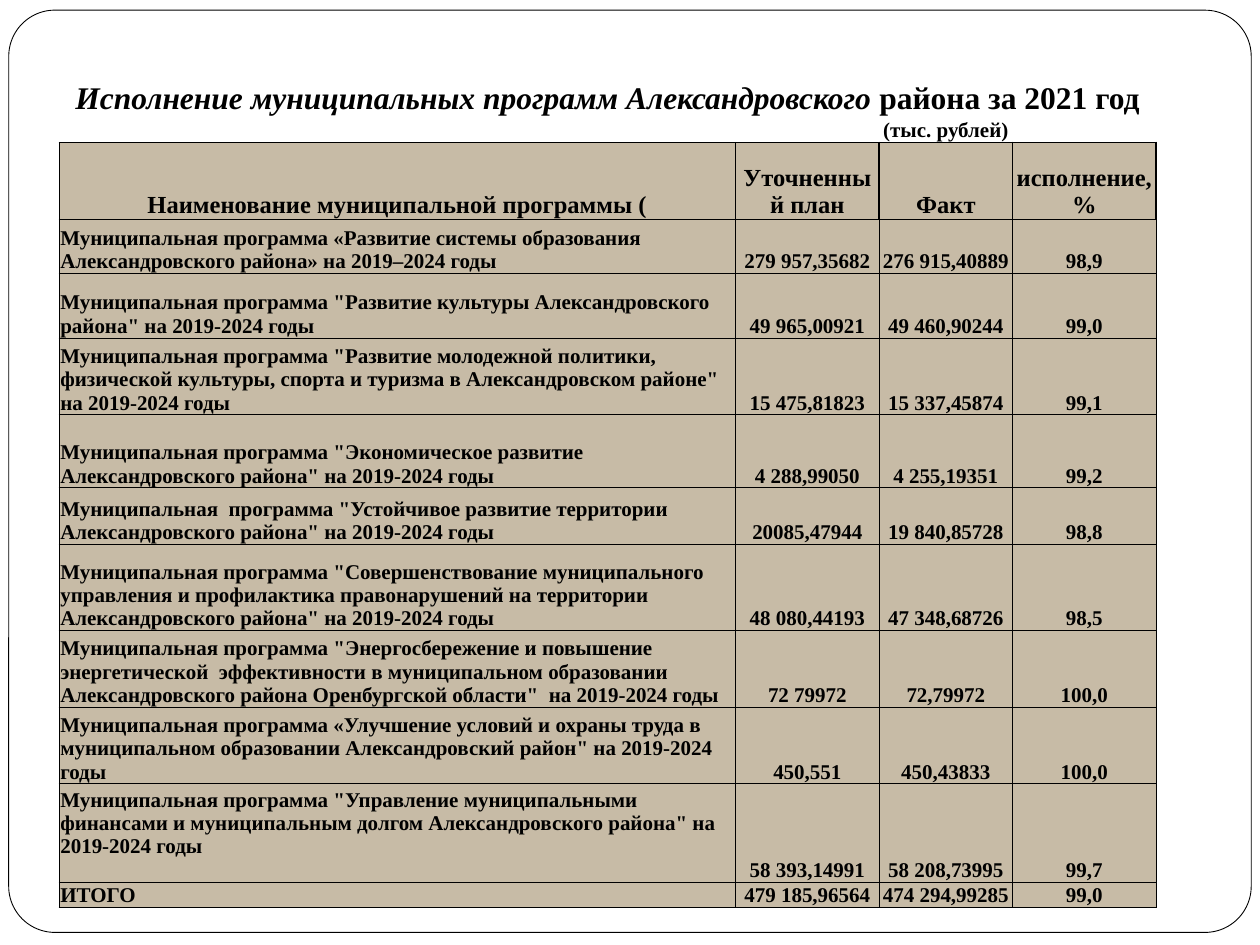
from lxml import etree
from pptx import Presentation
from pptx import util as u
from pptx.dml.color import RGBColor
from pptx.enum import shapes, text
from pptx.oxml.ns import qn

BLACK = RGBColor(0, 0, 0)
WHITE = RGBColor(255, 255, 255)
BEIGE = RGBColor(0xC7, 0xBB, 0xA6)
FONT = "Times New Roman"
THIN, THICK = 0.5, 1
CENTER, LEFT = text.PP_ALIGN.CENTER, text.PP_ALIGN.LEFT

COLUMN_WIDTHS = [386.6, 82, 76.3, 82]
ROW_HEIGHTS = [45.4, 15.1, 43.9, 31, 36.9, 43.9, 41.8, 32.4, 49, 43.9, 43.9, 56.2, 14.4]
HEADERS = ["Наименование муниципальной программы (", "Уточненный план", "Факт", "исполнение, %"]
PROGRAMS = [
    ("Муниципальная программа «Развитие системы образования Александровского района» на 2019–2024 годы",
     "279 957,35682", "276 915,40889", "98,9"),
    ('Муниципальная программа "Развитие культуры Александровского района" на 2019-2024 годы',
     "49 965,00921", "49 460,90244", "99,0"),
    ('Муниципальная программа "Развитие молодежной политики, физической культуры, спорта и туризма '
     'в Александровском районе" на 2019-2024 годы',
     "15 475,81823", "15 337,45874", "99,1"),
    ('Муниципальная программа "Экономическое развитие Александровского района" на 2019-2024 годы',
     "4 288,99050", "4 255,19351", "99,2"),
    ('Муниципальная  программа "Устойчивое развитие территории Александровского района" на 2019-2024 годы',
     "20085,47944", "19 840,85728", "98,8"),
    ('Муниципальная программа "Совершенствование муниципального управления и профилактика '
     'правонарушений на территории Александровского района" на 2019-2024 годы',
     "48 080,44193", "47 348,68726", "98,5"),
    ('Муниципальная программа "Энергосбережение и повышение энергетической  эффективности в '
     'муниципальном образовании Александровского района Оренбургской области"  на 2019-2024 годы',
     "72 79972", "72,79972", "100,0"),
    ("Муниципальная программа «Улучшение условий и охраны труда в муниципальном образовании "
     'Александровский район" на 2019-2024 годы',
     "450,551", "450,43833", "100,0"),
    ('Муниципальная программа "Управление муниципальными финансами и муниципальным долгом '
     'Александровского района" на 2019-2024 годы',
     "58 393,14991", "58 208,73995", "99,7"),
    ("ИТОГО", "479 185,96564", "474 294,99285", "99,0"),
]


def add_frame(slide):
    frame = slide.shapes.add_shape(
        shapes.MSO_SHAPE.ROUNDED_RECTANGLE, u.Pt(5), u.Pt(5.8), u.Pt(710), u.Pt(527))
    frame.adjustments[0] = 0.05
    frame.shadow.inherit = False
    frame.fill.solid()
    frame.fill.fore_color.rgb = WHITE
    frame.line.color.rgb = BLACK
    frame.line.width = u.Pt(0.5)


def add_table(slide):
    table = slide.shapes.add_table(
        len(ROW_HEIGHTS), len(COLUMN_WIDTHS), u.Pt(33.8), u.Pt(20.9),
        u.Pt(sum(COLUMN_WIDTHS)), u.Pt(sum(ROW_HEIGHTS))).table
    table.first_row = table.horz_banding = False
    for column, width in zip(table.columns, COLUMN_WIDTHS):
        column.width = u.Pt(width)
    for row, height in zip(table.rows, ROW_HEIGHTS):
        row.height = u.Pt(height)
    return table


def set_borders(cell, left=0, right=0, top=0, bottom=0):
    properties = cell._tc.get_or_add_tcPr()
    for side, width in zip("LRTB", (left, right, top, bottom)):
        line = etree.SubElement(properties, qn(f"a:ln{side}"), w=str(u.Pt(width)))
        if width:
            fill = etree.SubElement(line, qn("a:solidFill"))
            etree.SubElement(fill, qn("a:srgbClr"), val=str(BLACK))
        else:
            etree.SubElement(line, qn("a:noFill"))


def set_fill(cell, color):
    if color is None:
        cell.fill.background()
    else:
        cell.fill.solid()
        cell.fill.fore_color.rgb = color


def format_cell(cell, color, **borders):
    set_borders(cell, **borders)
    set_fill(cell, color)
    cell.margin_left = cell.margin_right = cell.margin_top = u.Pt(0.7)
    cell.margin_bottom = 0
    cell.vertical_anchor = text.MSO_ANCHOR.BOTTOM


def write(cell, content, size, align=CENTER, italic=False):
    paragraph = cell.text_frame.paragraphs[0]
    paragraph.alignment = align
    run = paragraph.add_run()
    run.text = content
    font = run.font
    font.name, font.size, font.bold, font.italic = FONT, u.Pt(size), True, italic
    font.color.rgb = BLACK


def fill_title(table):
    title = table.cell(0, 0)
    title.merge(table.cell(0, 3))
    for cell in table.rows[0].cells:
        format_cell(cell, WHITE)
    write(title, "Исполнение муниципальных программ Александровского ", 18, italic=True)
    write(title, "района за 2021 год", 18)


def fill_units(table):
    for index, cell in enumerate(table.rows[1].cells):
        format_cell(cell, None, bottom=THICK if index else THIN)
        if index == 2:
            write(cell, "(тыс. рублей)", 12)
        else:
            paragraph = cell.text_frame.paragraphs[0]
            etree.SubElement(paragraph._p, qn("a:endParaRPr"), sz="1000")


def fill_headers(table):
    for index, (cell, header) in enumerate(zip(table.rows[2].cells, HEADERS)):
        format_cell(cell, BEIGE, left=THICK if index > 1 else THIN, right=THICK if index else THIN,
                    top=THICK if index else THIN, bottom=THIN)
        write(cell, header, 14)


def fill_programs(table):
    for row_index, program in enumerate(PROGRAMS, start=3):
        for index, content in enumerate(program):
            cell = table.cell(row_index, index)
            format_cell(cell, BEIGE, left=THIN, right=THIN, top=THIN, bottom=THIN)
            write(cell, content, 12, CENTER if index else LEFT)
    table.cell(len(ROW_HEIGHTS) - 2, 0).margin_bottom = u.Pt(13.5)


def main():
    presentation = Presentation()
    presentation.slide_width, presentation.slide_height = u.Pt(720), u.Pt(540)
    slide = presentation.slides.add_slide(presentation.slide_layouts[6])
    add_frame(slide)
    table = add_table(slide)
    fill_title(table)
    fill_units(table)
    fill_headers(table)
    fill_programs(table)
    presentation.save("out.pptx")


if __name__ == "__main__":
    main()
